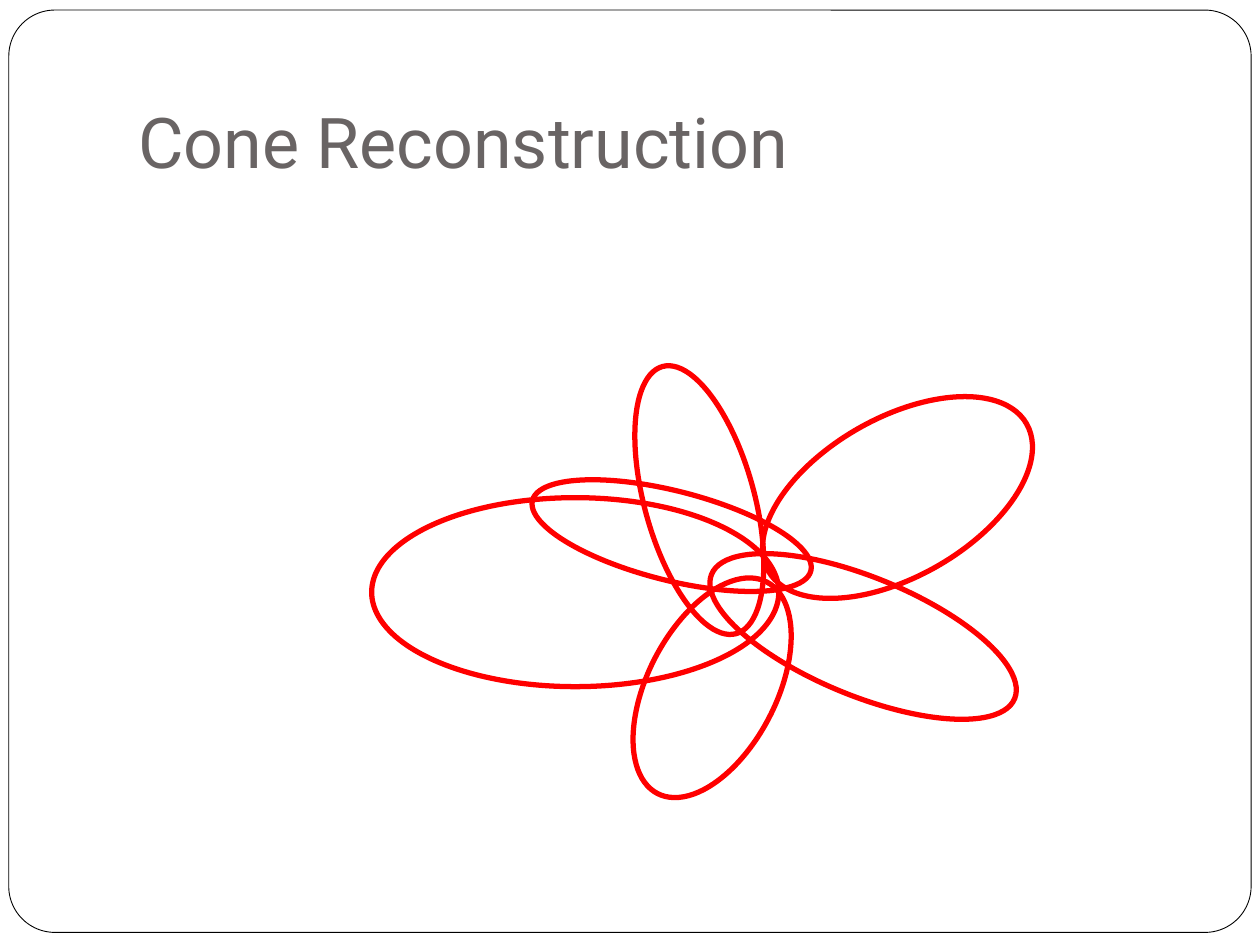
from pptx import Presentation
from pptx.dml.color import RGBColor
from pptx.enum.shapes import MSO_SHAPE as Preset
from pptx.enum.text import MSO_ANCHOR as Anchor
from pptx.util import Inches, Pt

WIDTH, HEIGHT = 10, 7.5


def color(hex_code):
    return RGBColor.from_string(hex_code)


def add_outline(slide, preset, box, line, weight, fill=None, rotation=0):
    outline = slide.shapes.add_shape(preset, *map(Inches, box))
    outline.shadow.inherit = False
    outline.rotation = rotation
    outline.line.color.rgb = color(line)
    outline.line.width = Pt(weight)
    if fill:
        outline.fill.solid()
        outline.fill.fore_color.rgb = color(fill)
    else:
        outline.fill.background()
    return outline


def add_text(slide, box, text, *, size, font, ink, anchor, insets):
    frame = slide.shapes.add_textbox(*map(Inches, box)).text_frame
    frame.word_wrap = True
    frame.vertical_anchor = anchor
    (frame.margin_left, frame.margin_top,
     frame.margin_right, frame.margin_bottom) = map(Inches, insets)
    run = frame.paragraphs[0].add_run()
    run.text = text
    run.font.size = Pt(size)
    run.font.name = font
    run.font.color.rgb = color(ink)


def draw_frame(slide, box):
    border = add_outline(slide, Preset.ROUNDED_RECTANGLE, box, "000000", 0.5, fill="FFFFFF")
    border.adjustments[0] = 0.05


def draw_title(slide, box):
    add_text(slide, box, "Cone Reconstruction", size=40, font="Roboto", ink="696464",
             anchor=Anchor.BOTTOM, insets=(0.1, 0.05, 0.1, 0.1))


def draw_cone_ellipses(slide, box):
    left, top, width, height = box
    ellipses = [
        (0.303, 0.573, 3.23, 1.5, 0),
        (0.493, 0.313, 0.87, 2.2, -15.4),
        (0.739, 0.675, 2.6, 0.94, 22.3),
        (0.449, 0.513, 2.28, 0.71, 14.2),
        (0.786, 0.452, 2.36, 1.26, -29.7),
        (0.503, 0.735, 1.02, 1.89, 27.3),
    ]
    ellipses = [
        (0.302, 0.523, 0.604, 0.431, 0),
        (0.486, 0.313, 0.163, 0.632, -15.4),
        (0.729, 0.624, 0.486, 0.27, 22.3),
        (0.445, 0.394, 0.426, 0.204, 14.2),
        (0.78, 0.307, 0.441, 0.362, -29.7),
        (0.505, 0.741, 0.191, 0.543, 27.3),
    ]
    for center_x, center_y, share_x, share_y, rotation in ellipses:
        long_x, long_y = share_x * width, share_y * height
        place = (left + center_x * width - long_x / 2,
                 top + center_y * height - long_y / 2, long_x, long_y)
        add_outline(slide, Preset.OVAL, place, "FF0000", 3, rotation=rotation)


def main():
    deck = Presentation()
    deck.slide_width, deck.slide_height = Inches(WIDTH), Inches(HEIGHT)
    slide = deck.slides.add_slide(deck.slide_layouts[6])
    draw_frame(slide, (0.07, 0.08, 9.86, 7.32))
    draw_title(slide, (0.1 * WIDTH, 0.04 * HEIGHT, 0.85 * WIDTH, 1.25))
    draw_cone_ellipses(slide, (2.95, 2.88, 5.35, 3.48))
    deck.save("out.pptx")


if __name__ == "__main__":
    main()
